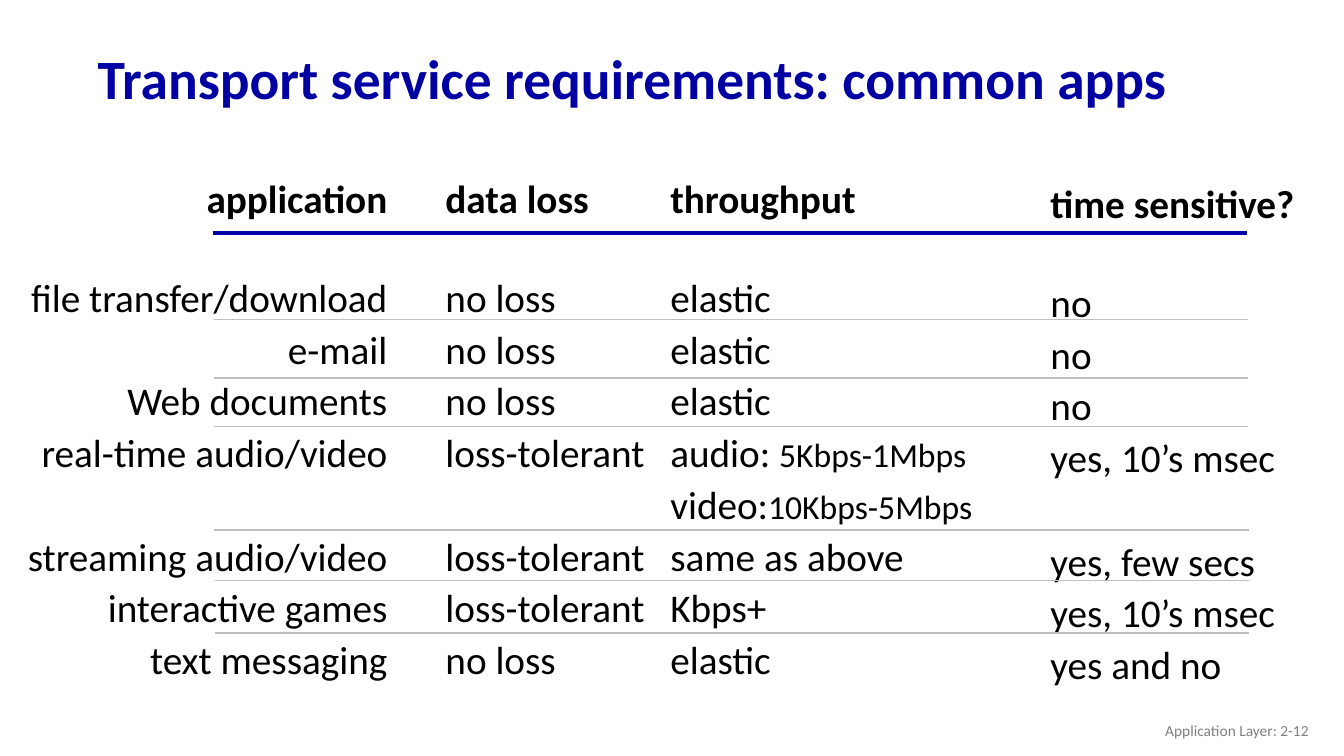
from dataclasses import dataclass

from lxml.etree import SubElement
from pptx import Presentation
from pptx.dml.color import RGBColor
from pptx.enum.shapes import MSO_CONNECTOR
from pptx.enum.text import MSO_ANCHOR, MSO_AUTO_SIZE, PP_ALIGN
from pptx.oxml.ns import qn
from pptx.slide import Slide
from pptx.text.text import TextFrame, _Paragraph
from pptx.util import Inches, Pt

HUES = {"title": "0000A3", "head": "0000A8", "rule": "BFBFBF",
        "text": "000000", "foot": "808080"}
FONT = "Calibri"
SIZE, SMALL = 28, 24
HEAD_GAP, ROW_GAP = 33.7, 37  # points left free by an empty line


@dataclass
class Column:
    left: float
    top: float
    width: float
    head: str
    rows: list[str | tuple[str, str]]  # a pair is a label and a smaller value
    wrap: bool = True
    align: PP_ALIGN = PP_ALIGN.LEFT


@dataclass
class Rule:
    left: float
    right: float
    top: float
    hue: str = "rule"
    weight: float = 1.25


COLUMNS = [
    Column(0.13, 1.68, 3.81, "application",
           ["file transfer/download", "e-mail", "Web documents",
            "real-time audio/video", "", "streaming audio/video",
            "interactive games", "text messaging"],
           wrap=False, align=PP_ALIGN.RIGHT),
    Column(4.32, 1.68, 2.2, "data loss",
           ["no loss", "no loss", "no loss", "loss-tolerant", "",
            "loss-tolerant", "loss-tolerant", "no loss"], wrap=False),
    Column(6.55, 1.68, 3.31, "throughput",
           ["elastic", "elastic", "elastic", ("audio: ", "5Kbps-1Mbps"),
            ("video:", "10Kbps-5Mbps"), "same as above", "Kbps+", "elastic"]),
    Column(10.32, 1.73, 3.21, "time sensitive?",
           ["no", "no", "no", "yes, 10’s msec", "",
            "yes, few secs", "yes, 10’s msec", "yes and no"]),
]

RULES = [
    Rule(2.11, 12.37, 2.31, "head", 2.5),
    Rule(2.12, 12.38, 3.17),
    Rule(2.12, 12.38, 3.75),
    Rule(2.12, 12.38, 4.23),
    Rule(2.12, 12.39, 5.26),
    Rule(2.13, 12.39, 5.76),
    Rule(2.13, 12.39, 6.28),
]


def add_box(slide: Slide, left: float, top: float, width: float,
            height: float) -> TextFrame:
    box = slide.shapes.add_textbox(Inches(left), Inches(top),
                                   Inches(width), Inches(height))
    box.text_frame.word_wrap = True
    return box.text_frame


def add_run(para: _Paragraph, text: str, size: float = SIZE,
            hue: str = "text", bold: bool = False) -> None:
    run = para.add_run()
    run.text = text
    run.font.name = FONT
    run.font.size = Pt(size)
    run.font.bold = bold
    run.font.color.rgb = RGBColor.from_string(HUES[hue])


def add_column(slide: Slide, col: Column) -> None:
    frame = add_box(slide, col.left, col.top, col.width, 5.16)
    frame.word_wrap = col.wrap
    frame.auto_size = MSO_AUTO_SIZE.SHAPE_TO_FIT_TEXT
    para = frame.paragraphs[0]
    para.alignment = col.align
    add_run(para, col.head, bold=True)
    gap = HEAD_GAP
    for row in col.rows:
        if not row:
            gap += ROW_GAP
            continue
        para = frame.add_paragraph()
        para.alignment = col.align
        para.line_spacing = 1.1
        para.space_before = Pt(gap)
        gap = 0
        parts = (row,) if isinstance(row, str) else row
        for text, size in zip(parts, (SIZE, SMALL)):
            add_run(para, text, size)


def add_rule(slide: Slide, rule: Rule) -> None:
    line = slide.shapes.add_connector(
        MSO_CONNECTOR.STRAIGHT, Inches(rule.left), Inches(rule.top),
        Inches(rule.right), Inches(rule.top))
    line.line.color.rgb = RGBColor.from_string(HUES[rule.hue])
    line.line.width = Pt(rule.weight)
    SubElement(line._element.spPr, qn("a:effectLst"))


def main() -> None:
    deck = Presentation()
    deck.slide_width, deck.slide_height = Inches(13.33), Inches(7.5)
    slide = deck.slides.add_slide(deck.slide_layouts[6])

    # Title
    title = add_box(slide, 0.87, 0.32, 11.5, 0.98)
    title.vertical_anchor = MSO_ANCHOR.MIDDLE
    title.paragraphs[0].line_spacing = 0.9
    add_run(title.paragraphs[0], "Transport service requirements: common apps",
            39.6, "title", True)

    # Footer
    foot = add_box(slide, 10.08, 7.05, 3, 0.4)
    foot.vertical_anchor = MSO_ANCHOR.MIDDLE
    foot.paragraphs[0].alignment = PP_ALIGN.RIGHT
    add_run(foot.paragraphs[0], "Application Layer: 2-12", 11, "foot")

    # Columns and the rules between rows
    for col in COLUMNS:
        add_column(slide, col)
    for rule in RULES:
        add_rule(slide, rule)

    deck.save("out.pptx")


if __name__ == "__main__":
    main()
